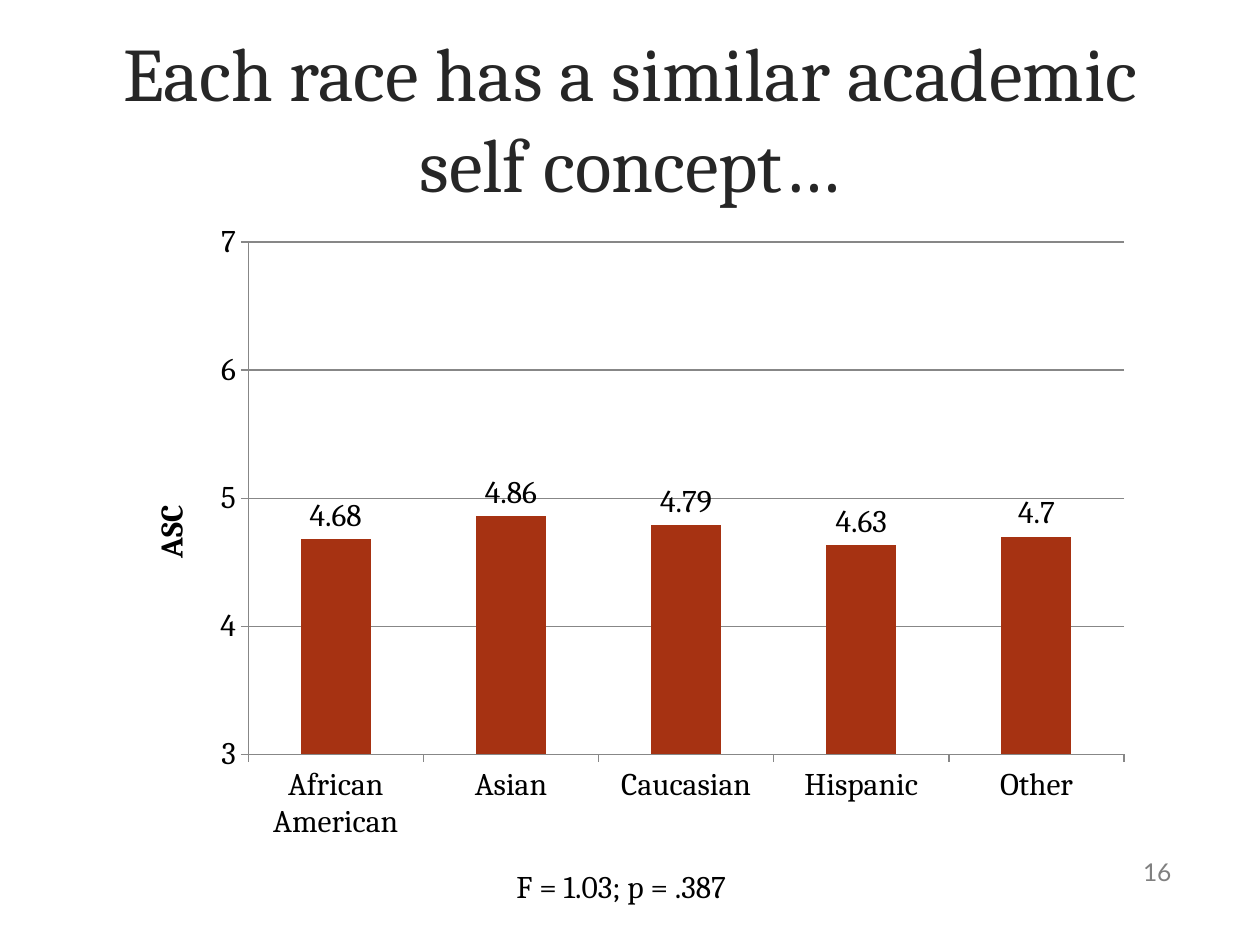
from pptx import Presentation
from pptx.chart.data import CategoryChartData
from pptx.dml.color import RGBColor
from pptx.enum.chart import XL_CHART_TYPE as ChartType
from pptx.enum.chart import XL_LABEL_POSITION as LabelPosition
from pptx.enum.chart import XL_TICK_MARK as TickMark
from pptx.enum.text import MSO_ANCHOR as Anchor
from pptx.enum.text import PP_ALIGN as Align
from pptx.oxml import parse_xml
from pptx.oxml.ns import nsdecls
from pptx.util import Pt

COLORS = {
    "title": "262626",
    "text": "000000",
    "number": "808080",
    "bar": "A63212",
    "line": "878787",
}


def color(name):
    return RGBColor.from_string(COLORS[name])


def write(box, text, size, tint, font="Cambria", align=Align.LEFT, anchor=Anchor.TOP, wrap=True):
    frame = box.text_frame
    frame.word_wrap = wrap
    frame.vertical_anchor = anchor
    para = frame.paragraphs[0]
    para.alignment = align
    span = para.add_run()
    span.text = text
    span.font.name = font
    span.font.size = Pt(size)
    span.font.color.rgb = color(tint)


deck = Presentation()
deck.slide_width, deck.slide_height = Pt(720), Pt(540)
page = deck.slides.add_slide(deck.slide_layouts[5])

title = page.shapes.title
title.left, title.top, title.width, title.height = Pt(36), Pt(21.6), Pt(648), Pt(90)
write(title, "Each race has a similar academic self concept…", 43.2, "title",
      align=Align.CENTER, anchor=Anchor.MIDDLE)

statistic = page.shapes.add_textbox(Pt(288), Pt(492), Pt(141), Pt(29))
write(statistic, "F = 1.03; p = .387", 18, "text", wrap=False)

scores = CategoryChartData()
scores.categories = ["African American", "Asian", "Caucasian", "Hispanic", "Other"]
scores.add_series("Series 1", [4.68, 4.86, 4.79, 4.63, 4.7])
chart = page.shapes.add_chart(
    ChartType.COLUMN_CLUSTERED, Pt(72), Pt(120), Pt(582), Pt(366), scores
).chart
chart.has_legend = False
chart.has_title = False
chart.font.name = "Cambria"
chart.font.size = Pt(18)
chart.font.color.rgb = color("text")

plot = chart.plots[0]
plot.gap_width = 150
plot.vary_by_categories = False
bars = plot.series[0].format.fill
bars.solid()
bars.fore_color.rgb = color("bar")
plot.has_data_labels = True
plot.data_labels.show_value = True
plot.data_labels.position = LabelPosition.OUTSIDE_END

value_axis = chart.value_axis
value_axis.minimum_scale, value_axis.maximum_scale = 3, 7
value_axis.major_unit = 1
value_axis.has_major_gridlines = True
value_axis.axis_title.text_frame.text = "ASC"
axis_font = value_axis.axis_title.text_frame.paragraphs[0].runs[0].font
axis_font.name = "Cambria"
axis_font.size = Pt(18)
axis_font.bold = True
axis_font.color.rgb = color("text")
for axis in (value_axis, chart.category_axis):
    axis.major_tick_mark = TickMark.OUTSIDE
    axis.minor_tick_mark = TickMark.NONE
for item in (value_axis, chart.category_axis, value_axis.major_gridlines):
    item.format.line.color.rgb = color("line")
    item.format.line.width = Pt(0.75)

plot_area = chart.element.chart.plotArea
for layout in plot_area.findall("{*}layout"):
    plot_area.remove(layout)
sizes = {"x": 0.124, "y": 0.048, "w": 0.857, "h": 0.798}
places = "".join(f'<c:{key} val="{value:.2f}"/>' for key, value in sizes.items())
plot_area.insert(0, parse_xml(
    f'<c:layout {nsdecls("c")}><c:manualLayout><c:layoutTarget val="inner"/>'
    f'<c:xMode val="edge"/><c:yMode val="edge"/>{places}</c:manualLayout></c:layout>'
))

number = page.shapes.add_textbox(Pt(508.5), Pt(484), Pt(168), Pt(28.75))
write(number, "16", 14, "number", font="Lato", align=Align.RIGHT, anchor=Anchor.MIDDLE)

deck.save("out.pptx")
